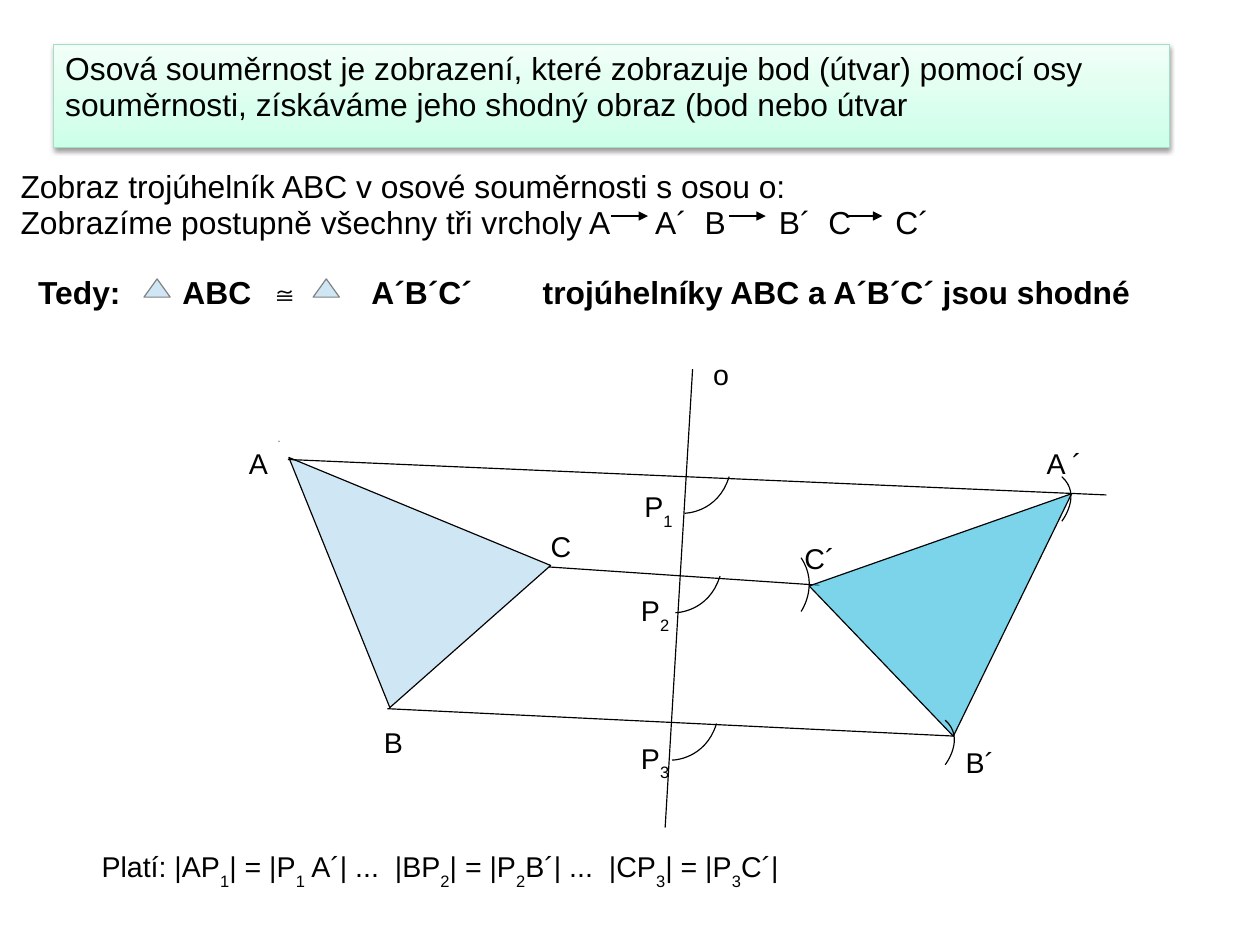
from lxml import etree
from pptx import Presentation, util as u
from pptx.dml.color import RGBColor
from pptx.enum import shapes, text
from pptx.oxml.ns import qn

CELL = u.Inches(0.1)
SLIDE_WIDTH, SLIDE_HEIGHT = u.Emu(10080625), u.Emu(7559675)
SPACE_SHARE = 0.278  # width of an Arial space as a share of the font size
COLOURS = {
    "ink": "000000",
    "outline": "808080",
    "banner_bottom": "CCFFE8",
    "banner_top": "F1FFF8",
    "banner_line": "A5DEC6",
    "pattern": "CFE7F5",
    "image": "23B8DC",
}
RIGHT_ANGLE = ((0, 0), (-1, 3.2), (-3.9, 3.2))
COMPASS = ((0, 0), (1.8, 1.6), (0, 3.9))
WIDE_COMPASS = ((0, 0), (1.6, 2.4), (0, 4.7))


def cells(*counts):
    """Turn counts of grid cells into lengths."""
    return [u.Emu(round(count * CELL)) for count in counts]


def colour(name):
    return RGBColor.from_string(COLOURS[name])


def add_child(parent, tag, **attributes):
    child = etree.SubElement(parent, qn(tag))
    for name, value in attributes.items():
        child.set(name, str(value))
    return child


def style_line(shape, name="ink"):
    shape.line.color.rgb = colour(name)
    shape.line.width = u.Pt(0.75)


def format_frame(frame, wrap=True):
    frame.margin_left, frame.margin_top, frame.margin_right, frame.margin_bottom = cells(1, 0.7, 1, 0.5)
    frame.auto_size = text.MSO_AUTO_SIZE.NONE
    frame.vertical_anchor = text.MSO_ANCHOR.TOP
    frame.word_wrap = wrap


def add_run(paragraph, content, size, bold, **attributes):
    run = paragraph.add_run()
    run.text = content
    run.font.name = "Arial"
    run.font.size = u.Pt(size)
    run.font.bold = bold
    run.font.color.rgb = colour("ink")
    for name, value in attributes.items():
        run._r.get_or_add_rPr().set(name, str(value))


def write(paragraph, content, size, bold=False, gaps=()):
    """Write text: "_" lowers the next character, "|>" is a space as wide as the next of gaps."""
    paragraph.alignment = text.PP_ALIGN.LEFT
    paragraph.line_spacing = 0.93
    paragraph.space_before = u.Pt(0)
    for number, section in enumerate(content.split("|>")):
        if number:
            extra = (gaps[number - 1] - 1) * SPACE_SHARE * size
            add_run(paragraph, " ", size, bold, spc=round(extra * 100))
        first, *rest = section.split("_")
        add_run(paragraph, first, size, bold)
        for part in rest:
            add_run(paragraph, part[0], size, bold, baseline=-33000)
            if part[1:]:
                add_run(paragraph, part[1:], size, bold)


def place(shape, *box):
    shape.left, shape.top, shape.width, shape.height = cells(*box)


def fill_banner(banner):
    place(banner, 4.7, 3.9, 97.6, 9)
    banner.fill.gradient()
    banner.fill.gradient_angle = 90
    for stop, name in zip(banner.fill.gradient_stops, ("banner_bottom", "banner_top")):
        stop.color.rgb = colour(name)
    style_line(banner, "banner_line")
    banner.shadow.inherit = False
    effects = banner._element.spPr.find(qn("a:effectLst"))
    shadow = add_child(effects, "a:outerShdw", blurRad=u.Pt(3.1), dist=u.Pt(1.6),
                       dir=5400000, rotWithShape=0)
    add_child(add_child(shadow, "a:srgbClr", val=COLOURS["ink"]), "a:alpha", val=38000)
    format_frame(banner.text_frame)
    write(banner.text_frame.paragraphs[0],
          "Osová souměrnost je zobrazení, které zobrazuje bod (útvar) pomocí osy "
          "souměrnosti, získáváme jeho shodný obraz (bod nebo útvar", 20)


def fill_task(task):
    place(task, 0.8, 14.2, 101.6, 16.6)
    frame = task.text_frame
    format_frame(frame)
    question, vertices, conclusion = frame.paragraphs[0], frame.add_paragraph(), frame.add_paragraph()
    write(question, "Zobraz trojúhelník ABC v osové souměrnosti s osou o:", 20)
    write(vertices, "Zobrazíme postupně všechny tři vrcholy A|>A´|>B|>B´|>C|>C´", 20,
          gaps=(5, 2, 6, 2, 5))
    write(conclusion, "Tedy:|>ABC|>≅|>A´B´C´|>trojúhelníky ABC a A´B´C´ jsou shodné", 20,
          bold=True, gaps=(7, 2, 8, 8))
    conclusion.space_before = u.Pt(22)
    for paragraph, indent in zip(frame.paragraphs, cells(0, 0, 1.54)):
        properties = paragraph._p.get_or_add_pPr()
        properties.set("marL", str(indent))
        properties.set("indent", "0")
        add_child(properties, "a:buNone")


def add_label(slide, content, left, top, width=4.6, height=3.8, wrap=False, gaps=()):
    label = slide.shapes.add_textbox(*cells(left, top, width, height))
    format_frame(label.text_frame, wrap)
    write(label.text_frame.paragraphs[0], content, 18, gaps=gaps)


def add_line(slide, start, end, arrow=False):
    line = slide.shapes.add_connector(shapes.MSO_CONNECTOR.STRAIGHT, *cells(*start, *end))
    style_line(line)
    if arrow:
        add_child(line.line._get_or_add_ln(), "a:tailEnd", type="triangle")
    add_child(line._element.spPr, "a:effectLst")


def add_figure(slide, kind, box, fill, line="ink", apex=None, rotation=0):
    figure = slide.shapes.add_shape(kind, *cells(*box))
    figure.shadow.inherit = False
    figure.fill.solid()
    figure.fill.fore_color.rgb = colour(fill)
    style_line(figure, line)
    figure.rotation = rotation
    if apex:
        figure.adjustments[0] = apex
    return figure


def add_arc(slide, left, top, curve):
    """Draw a cubic curve whose second control point is its end."""
    (x0, y0), (x1, y1), (x2, y2) = curve
    points = []
    for step in range(17):
        t = step / 16
        near, pull, far = (1 - t) ** 3, 3 * t * (1 - t) ** 2, 3 * t * t * (1 - t) + t ** 3
        points.append(cells(left + near * x0 + pull * x1 + far * x2,
                            top + near * y0 + pull * y1 + far * y2))
    builder = slide.shapes.build_freeform(*points[0])
    builder.add_line_segments(points[1:], close=False)
    arc = builder.convert_to_shape()
    arc.shadow.inherit = False
    arc.fill.background()
    style_line(arc)


def main():
    presentation = Presentation()
    presentation.slide_width, presentation.slide_height = SLIDE_WIDTH, SLIDE_HEIGHT
    slide = presentation.slides.add_slide(presentation.slide_layouts[1])
    fill_banner(slide.shapes.title)
    fill_task(slide.placeholders[1])

    triangle = shapes.MSO_SHAPE.ISOSCELES_TRIANGLE
    add_figure(slide, shapes.MSO_SHAPE.OVAL, (24.4, 38.6, 0.02, 0.02), "ink", "outline")
    add_figure(slide, triangle, (26.1, 38.8, 23.6, 17.7), "pattern", apex=0.735, rotation=68)
    for start, end in (((60.6, 32.3), (58.2, 72.4)), ((25.2, 40.2), (96.8, 43.3)),
                       ((33.9, 62), (83.5, 64.4)), ((48, 49.6), (71.7, 51.2))):
        add_line(slide, start, end)
    image = add_figure(slide, triangle, (69.1, 41.5, 23.6, 17.1), "image", apex=0.734, rotation=116)
    image._element.spPr.find(qn("a:xfrm")).set("flipV", "1")
    image_colour = image._element.spPr.find(qn("a:solidFill")).find(qn("a:srgbClr"))
    add_child(image_colour, "a:alpha", val=60000)

    for left in (53.5, 63.8, 74):
        add_line(slide, (left, 18.9), (left + 3.2, 18.9), arrow=True)
    for left in (12.6, 27.4):
        add_figure(slide, triangle, (left, 24.4, 2.3, 1.6), "pattern", "outline")
    for left, top, curve in ((63.8, 41.7, RIGHT_ANGLE), (63, 50.4, RIGHT_ANGLE),
                             (62.7, 63.3, RIGHT_ANGLE), (92.9, 41.7, COMPASS),
                             (82.7, 63, COMPASS), (70.1, 48.8, WIDE_COMPASS)):
        add_arc(slide, left, top, curve)

    for content, left, top, width in (
            ("A", 20.8, 38.6, 3.6), ("B", 32.6, 63, 3.6), ("C", 47.2, 45.8, 4.6),
            ("o", 61.4, 30.8, 4.9), ("B´", 83.5, 64.7, 4.5), ("C´", 69.4, 46.9, 4.6),
            ("A ´", 90.6, 38.6, 5.5), ("P_1", 55.4, 42.1, 4.4),
            ("P_2", 55.1, 51.2, 4.4), ("P_3", 55.1, 64.1, 4.4)):
        add_label(slide, content, left, top, width)
    add_label(slide, "Platí: |AP_1| = |P_1 A´| ...|>|BP_2| = |P_2B´| ...|>|CP_3| = |P_3C´|",
              7.9, 73.6, 63, 4.4, wrap=True, gaps=(2, 2))
    presentation.save("out.pptx")


if __name__ == "__main__":
    main()
